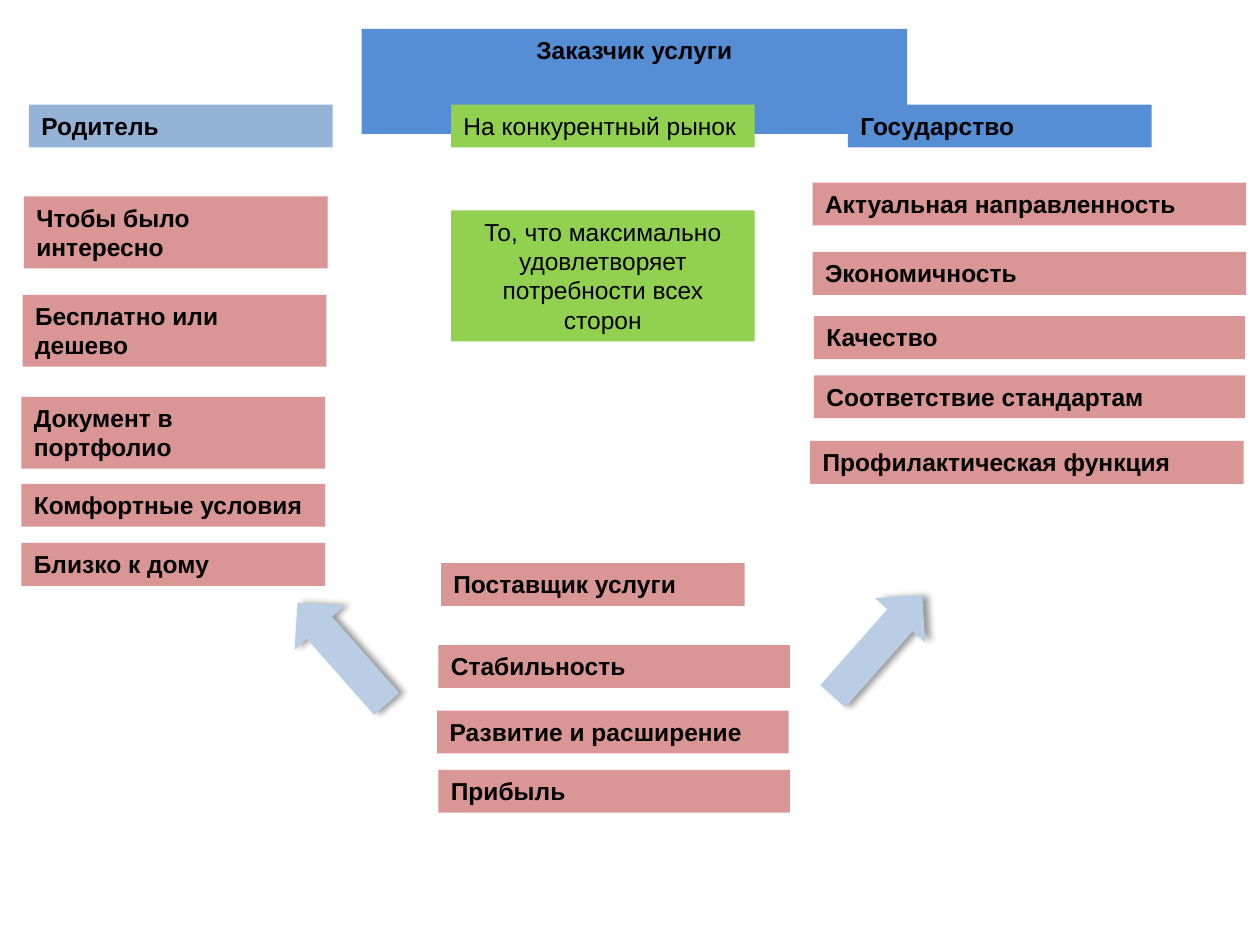
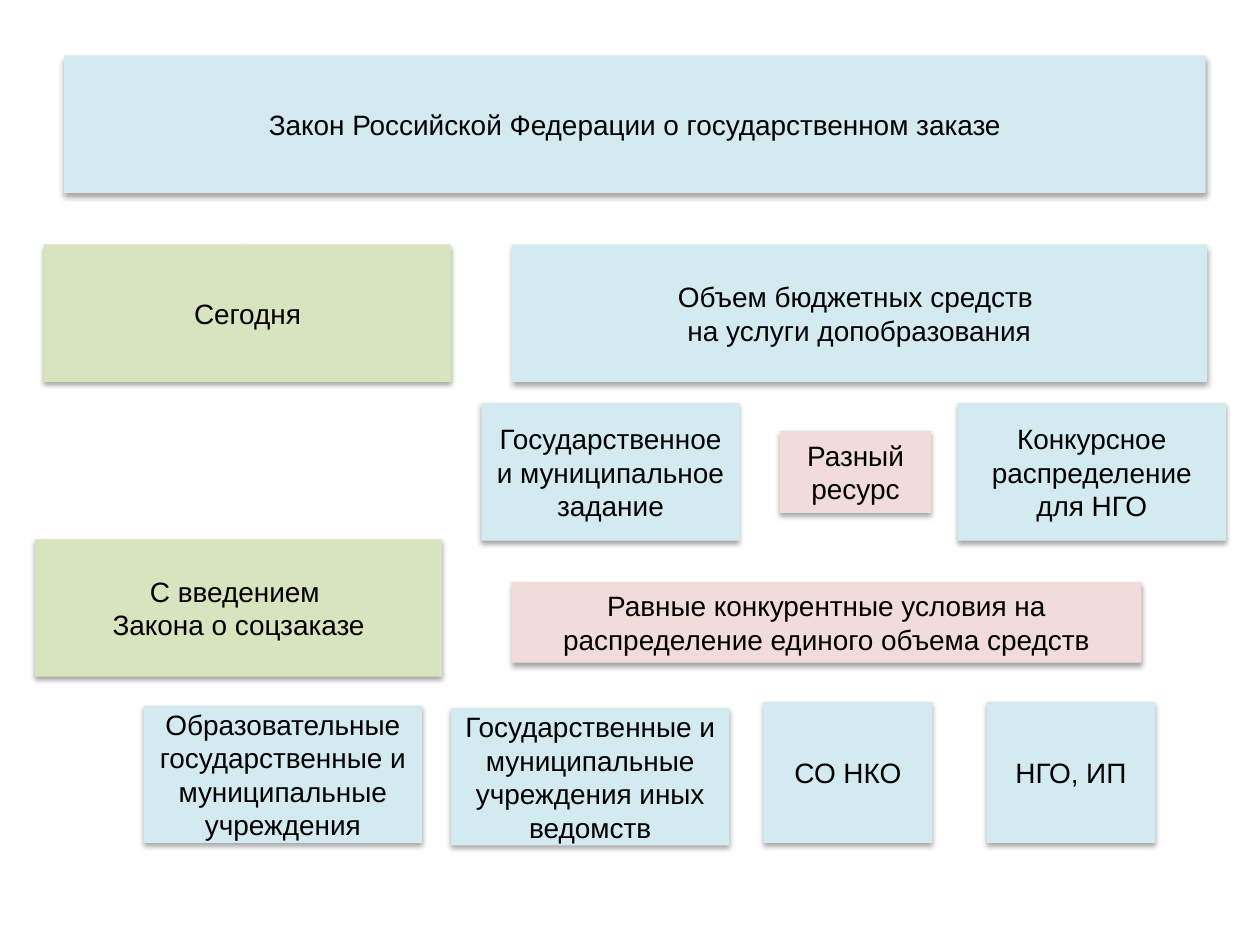
import pptx
import pptx.dml.color
import pptx.enum.shapes
import pptx.enum.text
import pptx.oxml
import pptx.oxml.ns
import pptx.util

Inches = pptx.util.Inches
Anchor = pptx.enum.text.MSO_ANCHOR
Align = pptx.enum.text.PP_ALIGN
AutoSize = pptx.enum.text.MSO_AUTO_SIZE
Preset = pptx.enum.shapes.MSO_SHAPE

FONT = "Arial"
BLACK = "000000"
BLUE, PALE_BLUE, ARROW_BLUE = "558ED5", "95B3D7", "B9CDE5"
ROSE, GREEN = "D99694", "92D050"
SKY, OLIVE, PINK = "D3EAF1", "D7E4BD", "F2DCDB"

LABEL = {
    "size": 14, "bold": True, "align": Align.LEFT, "shadow": None,
    "frame": {"vertical_anchor": Anchor.TOP, "auto_size": AutoSize.SHAPE_TO_FIT_TEXT},
}
HEADING = {**LABEL, "align": Align.CENTER}
PLAIN = {**LABEL, "bold": False}
PLAIN_CENTERED = {**PLAIN, "align": Align.CENTER}
CARD = {
    "size": 16, "bold": False, "align": Align.CENTER, "shadow": (35, 3.1, 1.8, 90),
    "frame": {"vertical_anchor": Anchor.MIDDLE, "auto_size": AutoSize.NONE},
}
ARROW_SHADOW = (40, 4, 3, 0)
LINE_HEIGHT = 0.34
TWO_LINE_HEIGHT = 0.57
CARD_HEIGHT = 1.09


def color(hex_value):
    return pptx.dml.color.RGBColor.from_string(hex_value)


def apply_format(target, values):
    for name, value in values.items():
        setattr(target, name, value)


def place(shape, box):
    names = ("left", "top", "width", "height")
    apply_format(shape, {name: Inches(value) for name, value in zip(names, box)})


def add_shadow(shape, opacity, blur, distance, direction):
    namespace = pptx.oxml.ns.nsdecls("a")
    shape._element.spPr.append(pptx.oxml.parse_xml(
        f'<a:effectLst {namespace}><a:outerShdw blurRad="{pptx.util.Pt(blur)}" '
        f'dist="{pptx.util.Pt(distance)}" dir="{direction * 60000}" rotWithShape="0">'
        f'<a:srgbClr val="{BLACK}"><a:alpha val="{opacity * 1000}"/></a:srgbClr>'
        '</a:outerShdw></a:effectLst>'))


def paint(shape, fill, shadow):
    shape.fill.solid()
    shape.fill.fore_color.rgb = color(fill)
    shape.line.fill.background()
    if shadow:
        add_shadow(shape, *shadow)
    else:
        shape.shadow.inherit = False


def write(shape, text, style):
    frame = shape.text_frame
    frame.text = text
    margins = {"margin_left": Inches(0.1), "margin_right": Inches(0.1),
               "margin_top": Inches(0.05), "margin_bottom": Inches(0.05)}
    apply_format(frame, {"word_wrap": True, **margins, **style["frame"]})
    for paragraph in frame.paragraphs:
        paragraph.alignment = style["align"]
        apply_format(paragraph.font, {
            "name": FONT, "size": pptx.util.Pt(style["size"]), "bold": style["bold"]})
        paragraph.font.color.rgb = color(BLACK)


def add_box(slide, text, box, fill, style):
    shape = slide.shapes.add_shape(Preset.RECTANGLE, *map(Inches, box))
    paint(shape, fill, style["shadow"])
    write(shape, text, style)


def add_column(slide, width, items):
    for text, left, top, height in items:
        add_box(slide, text, (left, top, width, height), ROSE, LABEL)


def add_arrow(slide, left, top, rotation):
    arrow = slide.shapes.add_shape(
        Preset.RIGHT_ARROW, *map(Inches, (left, top, 1.07, 0.53)))
    arrow.rotation = rotation
    paint(arrow, ARROW_BLUE, ARROW_SHADOW)


def add_titled_slide(presentation, text, box, fill, style):
    slide = presentation.slides.add_slide(presentation.slide_layouts[5])
    title = slide.shapes.title
    place(title, box)
    paint(title, fill, style["shadow"])
    write(title, text, style)
    return slide


def build_customer_slide(presentation):
    slide = add_titled_slide(
        presentation, "Заказчик услуги", (2.87, 0.23, 4.33, LINE_HEIGHT), BLUE, HEADING)
    for text, left, fill, style in (
        ("Родитель", 0.23, PALE_BLUE, LABEL),
        ("На конкурентный рынок", 3.58, GREEN, PLAIN),
        ("Государство", 6.73, BLUE, LABEL),
    ):
        add_box(slide, text, (left, 0.83, 2.41, LINE_HEIGHT), fill, style)
    add_box(slide, "То, что максимально удовлетворяет потребности всех сторон",
            (3.58, 1.67, 2.41, 1.04), GREEN, PLAIN_CENTERED)
    add_column(slide, 2.41, (
        ("Чтобы было интересно", 0.19, 1.56, TWO_LINE_HEIGHT),
        ("Бесплатно или дешево", 0.18, 2.34, TWO_LINE_HEIGHT),
        ("Документ в портфолио", 0.17, 3.15, TWO_LINE_HEIGHT),
        ("Комфортные условия", 0.17, 3.84, LINE_HEIGHT),
        ("Близко к дому", 0.17, 4.31, LINE_HEIGHT),
        ("Поставщик услуги", 3.5, 4.47, LINE_HEIGHT),
    ))
    add_column(slide, 3.44, (
        ("Актуальная направленность", 6.45, 1.45, LINE_HEIGHT),
        ("Экономичность", 6.45, 2, LINE_HEIGHT),
        ("Профилактическая функция", 6.43, 3.5, LINE_HEIGHT),
    ))
    add_column(slide, 3.42, (
        ("Качество", 6.46, 2.51, LINE_HEIGHT),
        ("Соответствие стандартам", 6.46, 2.98, LINE_HEIGHT),
    ))
    add_column(slide, 2.79, (
        ("Стабильность", 3.48, 5.12, LINE_HEIGHT),
        ("Развитие и расширение", 3.47, 5.64, LINE_HEIGHT),
        ("Прибыль", 3.48, 6.11, LINE_HEIGHT),
    ))
    add_arrow(slide, 2.18, 4.92, 228.6)
    add_arrow(slide, 6.43, 4.86, 311.5)


def build_law_slide(presentation):
    slide = add_titled_slide(
        presentation, "Закон Российской Федерации о государственном заказе",
        (0.51, 0.44, 9.06, CARD_HEIGHT), SKY, CARD)
    for text, box, fill in (
        ("Сегодня", (0.35, 1.94, 3.23, CARD_HEIGHT), OLIVE),
        ("Объем бюджетных средств \nна услуги допобразования",
         (4.06, 1.94, 5.52, CARD_HEIGHT), SKY),
        ("Государственное и муниципальное задание", (3.82, 3.2, 2.05, CARD_HEIGHT), SKY),
        ("Разный ресурс", (6.19, 3.42, 1.2, 0.65), PINK),
        ("Конкурсное распределение для НГО", (7.6, 3.2, 2.13, CARD_HEIGHT), SKY),
        ("С введением \nЗакона о соцзаказе", (0.28, 4.28, 3.23, CARD_HEIGHT), OLIVE),
        ("Равные конкурентные условия на распределение единого объема средств",
         (4.06, 4.62, 5, 0.64), PINK),
        ("Образовательные\nгосударственные и муниципальные учреждения",
         (1.14, 5.6, 2.21, CARD_HEIGHT), SKY),
        ("Государственные и муниципальные учреждения иных ведомств",
         (3.58, 5.62, 2.21, CARD_HEIGHT), SKY),
        ("СО НКО", (6.06, 5.57, 1.34, 1.12), SKY),
        ("НГО, ИП", (7.83, 5.57, 1.34, 1.12), SKY),
    ):
        add_box(slide, text, box, fill, CARD)


def main():
    presentation = pptx.Presentation()
    apply_format(presentation, {"slide_width": Inches(10), "slide_height": Inches(7.5)})
    build_customer_slide(presentation)
    build_law_slide(presentation)
    presentation.save("out.pptx")


if __name__ == "__main__":
    main()
